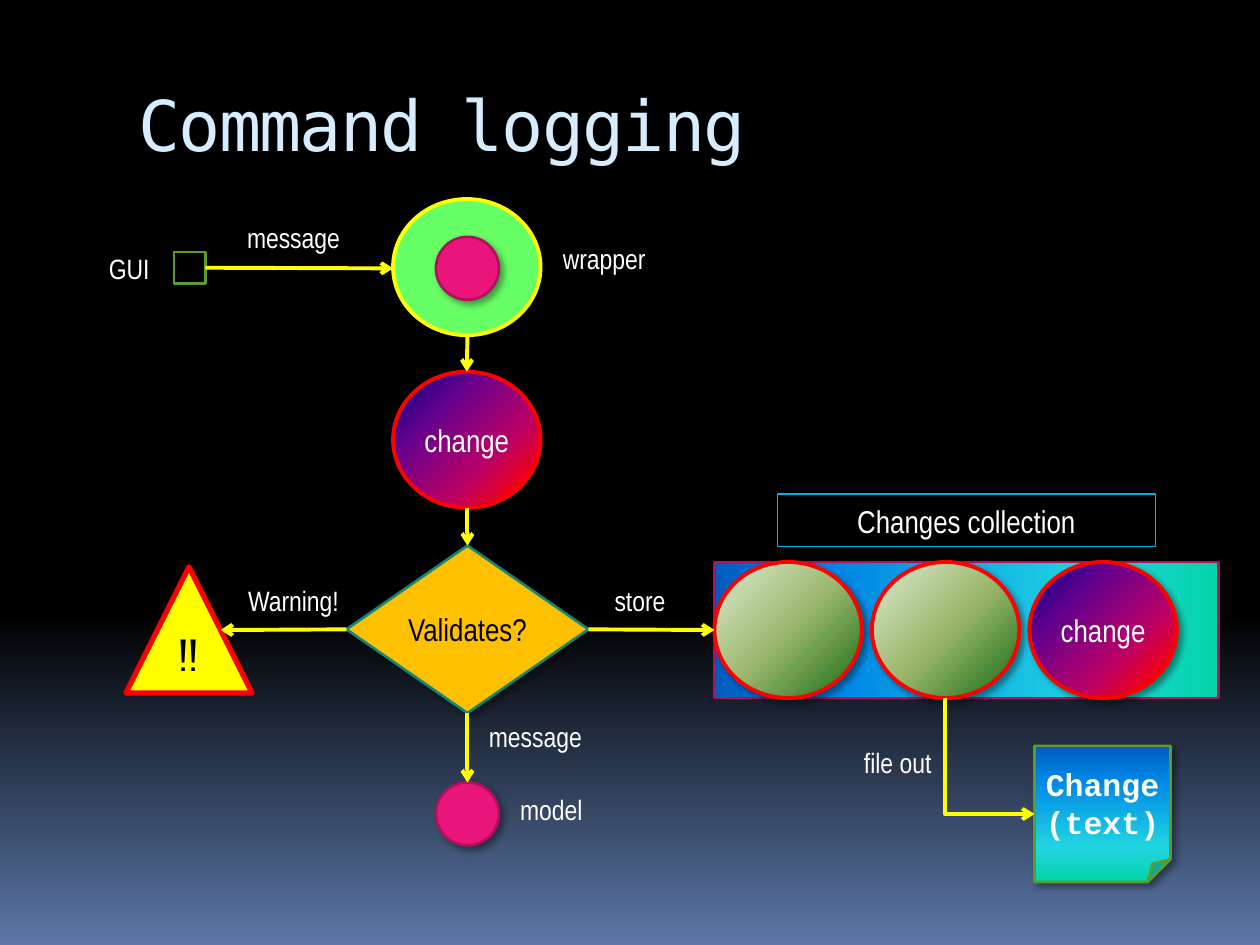
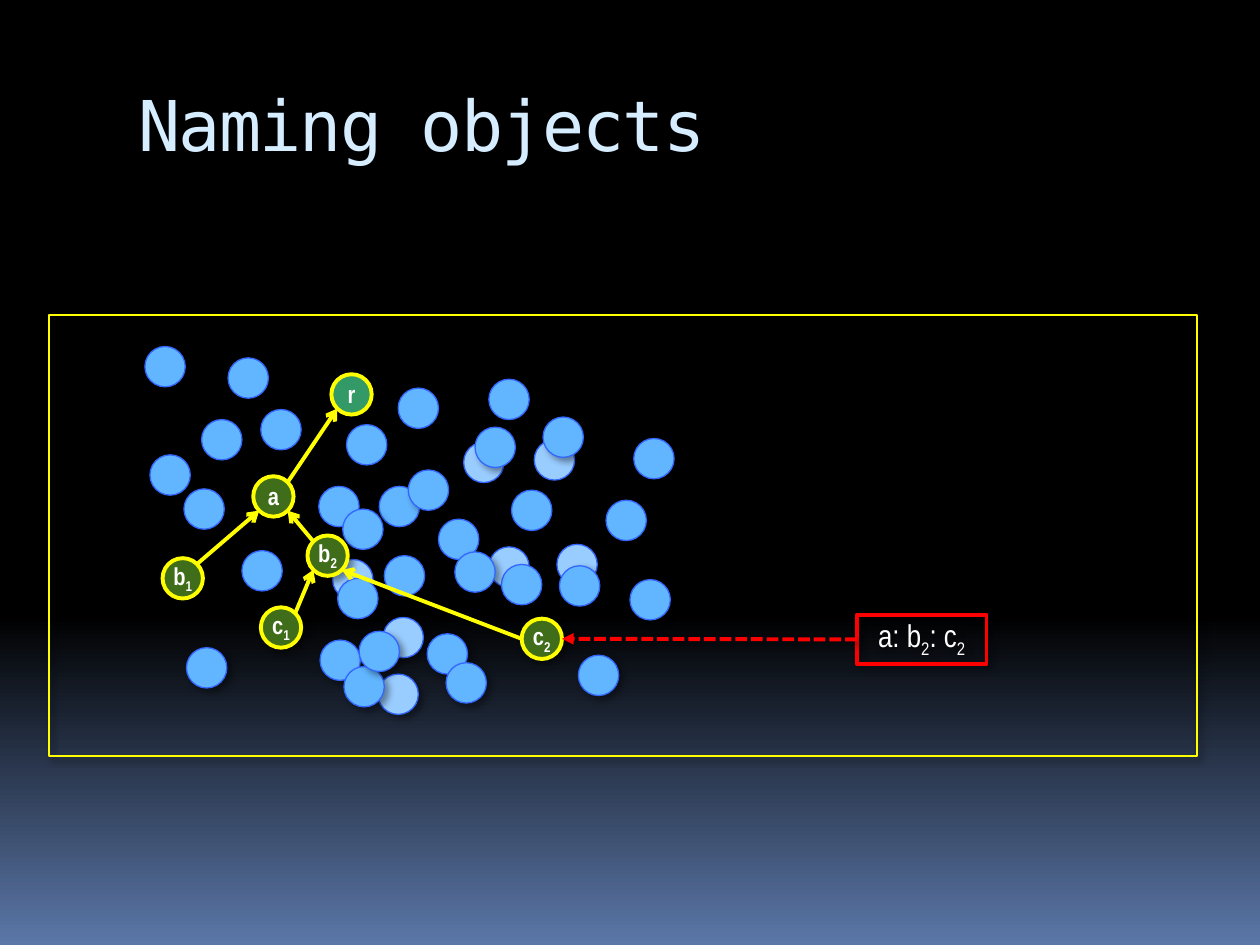
import dataclasses
import math

import lxml.etree
import pptx
import pptx.dml.color
import pptx.enum.dml
import pptx.enum.shapes
import pptx.enum.text
import pptx.oxml.ns
import pptx.util

Inches = pptx.util.Inches
Pt = pptx.util.Pt
qn = pptx.oxml.ns.qn
SHAPE = pptx.enum.shapes.MSO_SHAPE
CONNECTOR = pptx.enum.shapes.MSO_CONNECTOR
ANCHOR = pptx.enum.text.MSO_ANCHOR
ALIGN = pptx.enum.text.PP_ALIGN


@dataclasses.dataclass(frozen=True)
class Gradient:
    stops: tuple
    angle: int


OCEAN = ((0, "03D4A8"), (25, "21D6E0"), (75, "0087E6"), (100, "005CBF"))


@dataclasses.dataclass(frozen=True)
class Theme:
    title_font: str = "DejaVu Sans Mono"
    body_font: str = "Arial Narrow"
    code_font: str = "Courier New"
    alert_font: str = "Cabin"
    title_size: int = 40
    alert_size: int = 24
    body_size: int = 18
    label_size: int = 16
    node_size: int = 14
    title_color: str = "D6ECFF"
    white: str = "FFFFFF"
    black: str = "000000"
    yellow: str = "FFFF00"
    red: str = "FF0000"
    green: str = "5E9B2C"
    wrapper: str = "66FF66"
    model: str = "EA157A"
    model_line: str = "B0105C"
    decision: str = "FFC000"
    decision_line: str = "138677"
    caption_line: str = "00B0F0"
    dot: str = "61B6FF"
    pale_dot: str = "99CCFF"
    dot_line: str = "3366FF"
    node: str = "3F6D19"
    root: str = "339966"
    thin: float = 0.75
    medium: float = 1.5
    thick: float = 2.25
    heavy: float = 3
    night: Gradient = Gradient(((0, "000000"), (65, "000000"), (100, "5B77A8")), 90)
    change: Gradient = Gradient(((0, "000082"), (30, "66008F"), (65, "BA0066"),
                                 (90, "FF0000"), (100, "FF8200")), 45)
    stored: Gradient = Gradient(((0, "DDEBCF"), (50, "9CB86E"), (100, "156B13")), 45)
    collection: Gradient = Gradient(OCEAN, 180)
    file: Gradient = Gradient(OCEAN, 270)


THEME = Theme()
DOT_SIZE = 0.32

PALE_DOTS = [
    (2.64, 4.44), (3.68, 3.51), (4.24, 3.49), (4.42, 4.32), (3.04, 4.9),
    (3, 5.35), (3.88, 4.34),
]
DOTS = [
    (1.6, 3.33), (1.19, 3.61), (2.53, 3.86), (1.92, 4.37), (1.48, 5.14),
    (2.54, 5.08), (1.81, 2.84), (3.16, 3.08), (2.07, 3.25), (2.75, 3.37),
    (3.48, 4.12), (1.46, 3.88), (3.01, 3.86), (3.39, 5.03), (3.77, 3.39),
    (2.72, 4.04), (4.06, 3.89), (3.24, 3.73), (4.81, 3.97), (3.98, 4.48),
    (2.68, 4.59), (3.05, 4.41), (2.73, 5.29), (3.54, 5.26), (2.85, 5.01),
    (4.59, 5.2), (5, 4.6), (3.88, 3.01), (4.31, 3.31), (5.03, 3.48),
    (3.61, 4.38), (4.44, 4.49), (1.15, 2.75),
]
NODES = {
    "a": (2.01, 3.78), "c_1": (2.07, 4.82), "b_2": (2.44, 4.25),
    "r": (2.63, 2.97), "c_2": (4.14, 4.91), "b_1": (1.29, 4.43),
}
LINKS = [
    ("a", 45, "r", 225), ("b_1", 45, "a", 225), ("b_2", 135, "a", 315),
    ("c_1", 45, "b_2", 225), ("c_2", 180, "b_2", 315),
]


def rgb(value):
    return pptx.dml.color.RGBColor.from_string(value)


def add_node(parent, tag, **attributes):
    return lxml.etree.SubElement(parent, qn(tag), attributes)


def paint(fill, owner, color):
    if color is None:
        fill.background()
    elif isinstance(color, Gradient):
        fill.gradient()
        fill.gradient_angle = 360 - color.angle
        stop_list = next(owner.iter(qn("a:gsLst")))
        stop_list.clear()
        for position, value in color.stops:
            stop = add_node(stop_list, "a:gs", pos=str(position * 1000))
            add_node(stop, "a:srgbClr", val=value)
    else:
        fill.solid()
        fill.fore_color.rgb = rgb(color)


def cast_shadow(effects):
    shadow = add_node(effects, "a:outerShdw", blurRad="50800", dist="38100",
                      dir="2700000", algn="tl", rotWithShape="0")
    color = add_node(shadow, "a:srgbClr", val=THEME.black)
    add_node(color, "a:alpha", val="40000")


def write_text(frame, text, size=THEME.body_size, font=THEME.body_font,
               color=THEME.white, bold=False, align=ALIGN.CENTER,
               anchor=ANCHOR.MIDDLE, insets=(0, 0, 0, 0), spacing=None):
    frame.word_wrap = True
    frame.vertical_anchor = anchor
    (frame.margin_left, frame.margin_top,
     frame.margin_right, frame.margin_bottom) = map(Inches, insets)
    for index, line in enumerate(text.split("\n")):
        para = frame.add_paragraph() if index else frame.paragraphs[0]
        para.alignment = align
        first, *rest = line.split("_")
        pieces = [(first, False)]
        for part in rest:
            pieces += [(part[:1], True), (part[1:], False)]
        for piece, lowered in pieces:
            if not piece:
                continue
            span = para.add_run()
            span.text = piece
            span.font.size = Pt(size)
            span.font.name = font
            span.font.bold = bold
            span.font.color.rgb = rgb(color)
            properties = span._r.get_or_add_rPr()
            if lowered:
                properties.set("baseline", "-25000")
            if spacing:
                properties.set("spc", str(spacing))


def add_label(page, text, left, top, width=1, height=0.33, **text_format):
    box = page.shapes.add_textbox(*map(Inches, (left, top, width, height)))
    settings = {"size": THEME.label_size, "anchor": ANCHOR.TOP, **text_format}
    write_text(box.text_frame, text, **settings)


def add_figure(page, kind, place, fill=None, line=THEME.yellow, weight=THEME.thick,
               shadow=True, text=None, **text_format):
    shape = page.shapes.add_shape(kind, *map(Inches, place))
    paint(shape.fill, shape.element, fill)
    shape.line.color.rgb = rgb(line)
    shape.line.width = Pt(weight)
    shape.shadow.inherit = False
    if shadow:
        cast_shadow(shape.element.spPr.find(qn("a:effectLst")))
    if text:
        write_text(shape.text_frame, text, **text_format)
    return shape


def add_arrow(page, start, finish, color=THEME.yellow, head="arrow", dash=None,
              shadow=False, begin=None, end=None, kind=CONNECTOR.STRAIGHT):
    arrow = page.shapes.add_connector(kind, *map(Inches, (*start, *finish)))
    if begin:
        arrow.begin_connect(*begin)
    if end:
        arrow.end_connect(*end)
    arrow.line.color.rgb = rgb(color)
    arrow.line.width = Pt(THEME.thick)
    if dash:
        arrow.line.dash_style = dash
    add_node(arrow.line._get_or_add_ln(), "a:tailEnd", type=head)
    effects = add_node(arrow._element.spPr, "a:effectLst")
    if shadow:
        cast_shadow(effects)
    return arrow


def add_corner_arrow(page, start, finish):
    arrow = add_arrow(page, start, finish, kind=CONNECTOR.ELBOW)
    across, down = finish[0] - start[0], finish[1] - start[1]
    arrow.left = Inches((start[0] + finish[0] - down) / 2)
    arrow.top = Inches((start[1] + finish[1] - across) / 2)
    arrow.width, arrow.height = Inches(down), Inches(across)
    properties = arrow._element.spPr
    properties.find(qn("a:prstGeom")).set("prst", "bentConnector2")
    frame = properties.find(qn("a:xfrm"))
    frame.set("rot", "16200000")
    frame.set("flipH", "1")


def add_page(deck, title):
    page = deck.slides.add_slide(deck.slide_layouts[6])
    paint(page.background.fill, page.element, THEME.night)
    add_label(page, title, 1, 0.56, 8.5, 1, size=THEME.title_size,
              font=THEME.title_font, color=THEME.title_color, align=ALIGN.LEFT,
              insets=(0.1, 0.09, 0.1, 0.05), spacing=-100)
    return page


def add_circle(page, left, top, fill, line=THEME.red, text=None):
    return add_figure(page, SHAPE.OVAL, (left, top, 1.17, 1.08), fill, line, text=text)


def add_model(page, top):
    return add_figure(page, SHAPE.OVAL, (3.46, top, 0.5, 0.5), THEME.model,
                      THEME.model_line, THEME.medium)


def add_dot(page, place, fill, line=THEME.dot_line, weight=THEME.thin, text=None):
    add_figure(page, SHAPE.OVAL, (*place, DOT_SIZE, DOT_SIZE), fill, line, weight,
               text=text, size=THEME.node_size, bold=True, insets=(0, 0, 0, 0.01))


def rim_point(name, degrees):
    left, top = NODES[name]
    radius, angle = DOT_SIZE / 2, math.radians(degrees)
    return (left + radius * (1 + math.cos(angle)),
            top + radius * (1 - math.sin(angle)))


def build_command_logging(deck):
    page = add_page(deck, "Command logging")
    gui = add_figure(page, SHAPE.RECTANGLE, (1.38, 2, 0.25, 0.25), line=THEME.green,
                     weight=THEME.medium, shadow=False)
    wrapper = add_circle(page, 3.12, 1.58, THEME.wrapper, THEME.yellow)
    page.shapes.add_group_shape([wrapper, add_model(page, 1.88)])
    change = add_circle(page, 3.12, 2.95, THEME.change, text="change")
    decision = add_figure(page, SHAPE.FLOWCHART_DECISION, (2.75, 4.33, 1.92, 1.33),
                          THEME.decision, THEME.decision_line, THEME.medium,
                          text="Validates?", color=THEME.black)
    collection = add_figure(page, SHAPE.RECTANGLE, (5.67, 4.46, 4, 1.08),
                            THEME.collection, THEME.model_line, THEME.medium,
                            shadow=False)
    add_circle(page, 8.17, 4.46, THEME.change, text="change")
    for left in (5.67, 6.92):
        add_circle(page, left, 4.46, THEME.stored)
    add_figure(page, SHAPE.RECTANGLE, (6.17, 3.92, 3, 0.42), line=THEME.caption_line,
               weight=THEME.thin, shadow=False, text="Changes collection")
    add_figure(page, SHAPE.ISOSCELES_TRIANGLE, (1, 4.5, 1, 1), THEME.yellow, THEME.red,
               THEME.heavy, shadow=False, text="!!", size=THEME.alert_size,
               font=THEME.alert_font, color=THEME.black, anchor=ANCHOR.TOP,
               insets=(0, 0, 0, 0.2))
    model = add_model(page, 6.21)
    add_figure(page, SHAPE.FOLDED_CORNER, (8.21, 5.92, 1.08, 1.08), THEME.file,
               THEME.green, THEME.medium, text="Change\n(text)", font=THEME.code_font,
               bold=True, insets=(0, 0.05, 0, 0.05))

    add_arrow(page, (1.63, 2.12), (3.12, 2.13), begin=(gui, 3))
    add_arrow(page, (3.71, 2.67), (3.71, 2.95), end=(change, 0))
    add_arrow(page, (3.71, 4.03), (3.71, 4.33), end=(decision, 0))
    add_arrow(page, (4.67, 5), (5.67, 5), begin=(decision, 3), end=(collection, 1))
    add_arrow(page, (2.75, 5), (1.75, 5), begin=(decision, 1))
    add_arrow(page, (3.71, 5.67), (3.71, 6.21), begin=(decision, 2), end=(model, 0))
    add_corner_arrow(page, (7.5, 5.54), (8.21, 6.46))

    add_label(page, "message", 1.83, 1.75)
    add_label(page, "Warning!", 1.83, 4.63)
    add_label(page, "store", 4.58, 4.63)
    add_label(page, "message", 3.75, 5.71)
    add_label(page, "model", 4, 6.29, 0.75)
    add_label(page, "wrapper", 4.42, 1.92, 0.75)
    add_label(page, "GUI", 0.69, 2, 0.67)
    add_label(page, "file out", 6.75, 5.92, 0.75)


def build_naming_objects(deck):
    page = add_page(deck, "Naming objects")
    add_figure(page, SHAPE.RECTANGLE, (0.39, 2.5, 9.11, 3.5), weight=THEME.medium)
    for place in PALE_DOTS:
        add_dot(page, place, THEME.pale_dot)
    for place in DOTS:
        add_dot(page, place, THEME.dot)
    for name, place in NODES.items():
        fill = THEME.root if name == "r" else THEME.node
        add_dot(page, place, fill, THEME.yellow, THEME.thick, name)
    label = add_figure(page, SHAPE.RECTANGLE, (6.8, 4.88, 1.03, 0.39), line=THEME.red,
                       text="a: b_2: c_2", insets=(0, 0.02, 0, 0.05))
    for child, leave, parent, arrive in LINKS:
        add_arrow(page, rim_point(child, leave), rim_point(parent, arrive))
    add_arrow(page, (6.8, 5.08), rim_point("c_2", 0), THEME.red, "triangle",
              pptx.enum.dml.MSO_LINE.SQUARE_DOT, shadow=True, begin=(label, 1))


def main():
    deck = pptx.Presentation()
    deck.slide_width, deck.slide_height = Inches(10), Inches(7.5)
    build_command_logging(deck)
    build_naming_objects(deck)
    deck.save("out.pptx")


if __name__ == "__main__":
    main()
